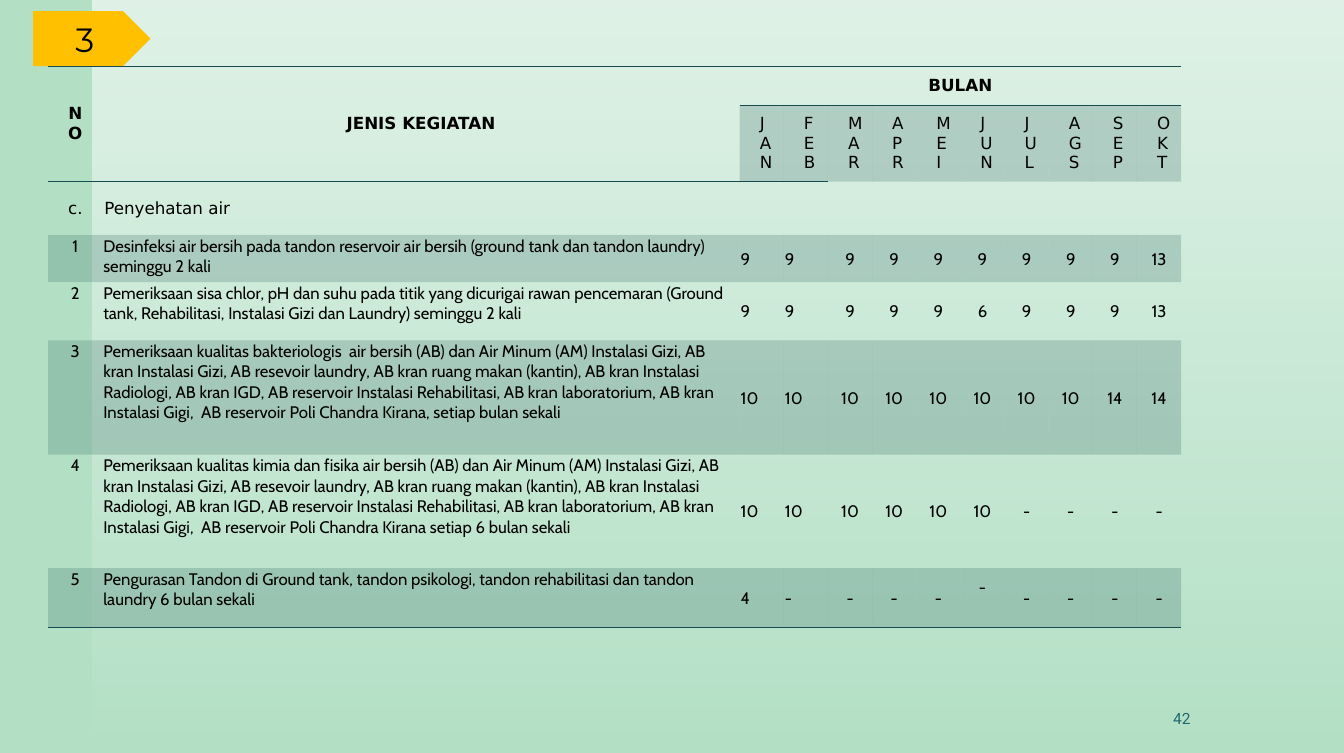
"""Build the water sanitation activity slide."""
import pptx
import pptx.dml.color
import pptx.enum.shapes
import pptx.enum.text
import pptx.oxml
import pptx.oxml.ns
import pptx.util

Inches, Pt, qn = pptx.util.Inches, pptx.util.Pt, pptx.oxml.ns.qn
ALIGN, ANCHOR = pptx.enum.text.PP_ALIGN, pptx.enum.text.MSO_ANCHOR
SHAPE = pptx.enum.shapes.MSO_SHAPE

DARK = "164B4F"
MONTHS = ["JAN", "FEB", "MAR", "APR", "MEI", "JUN", "JUL", "AGS", "SEP", "OKT"]
SECTION = "c.\tPenyehatan air"
TAPS = ("air bersih (AB) dan Air Minum (AM) Instalasi Gizi, AB kran Instalasi Gizi, "
        "AB resevoir laundry, AB kran ruang makan (kantin), AB kran Instalasi Radiologi, "
        "AB kran IGD, AB reservoir Instalasi Rehabilitasi, AB kran laboratorium, "
        "AB kran Instalasi Gigi,  AB reservoir Poli Chandra Kirana")
ACTIVITIES = [
    ("Desinfeksi air bersih pada tandon reservoir air bersih (ground tank dan tandon "
     "laundry) seminggu 2 kali", ["9"] * 9 + ["13"]),
    ("Pemeriksaan sisa chlor, pH dan suhu pada titik yang dicurigai rawan pencemaran "
     "(Ground tank, Rehabilitasi, Instalasi Gizi dan Laundry) seminggu 2 kali",
     ["9"] * 5 + ["6"] + ["9"] * 3 + ["13"]),
    ("Pemeriksaan kualitas bakteriologis  " + TAPS + ", setiap bulan sekali",
     ["10"] * 8 + ["14"] * 2),
    ("Pemeriksaan kualitas kimia dan fisika " + TAPS + " setiap 6 bulan sekali",
     ["10"] * 6 + ["-"] * 4),
    ("Pengurasan Tandon di Ground tank, tandon psikologi, tandon rehabilitasi dan tandon "
     "laundry 6 bulan sekali", ["4"] + ["-"] * 9),
]
COLS = [0.54, 6.35] + [0.44] * len(MONTHS)
ROWS = [0.39, 0.74, 0.53, 0.47, 0.58, 1.14, 1.13, 0.59]
HEAD_INSETS = (0.2, 0.08, 0.2, 0.08)
BODY_INSETS = (0.01, 0.01, 0.01, 0)


def rgb(color):
    return pptx.dml.color.RGBColor.from_string(color)


def set_alpha(clr, percent):
    alpha = clr.makeelement(qn("a:alpha"), {"val": str(percent * 1000)})
    clr.append(alpha)


def write(tf, text, font="DejaVu Sans", size=12, color="000000", bold=False,
          align=ALIGN.CENTER):
    tf.word_wrap = True
    p = tf.paragraphs[0]
    p.alignment = align
    r = p.add_run()
    r.text = text
    r.font.name, r.font.size, r.font.bold = font, Pt(size), bold
    r.font.color.rgb = rgb(color)
    return p


def fill_cell(cell, text, insets, anchor=ANCHOR.MIDDLE, **fmt):
    (cell.margin_left, cell.margin_top,
     cell.margin_right, cell.margin_bottom) = map(Inches, insets)
    cell.vertical_anchor = anchor
    return write(cell.text_frame, text, **fmt)


def shade(cell):
    cell.fill.solid()
    cell.fill.fore_color.rgb = rgb(DARK)
    for clr in cell._tc.iter(qn("a:solidFill")):
        if clr.getparent().tag == qn("a:tcPr"):
            set_alpha(clr[0], 20)


def rule(cell, side):
    ln = pptx.oxml.parse_xml(
        f'<a:ln{side} xmlns:a="http://schemas.openxmlformats.org/drawingml/2006/main" w="12700">'
        f'<a:solidFill><a:srgbClr val="{DARK}"/></a:solidFill></a:ln{side}>')
    cell._tc.get_or_add_tcPr().insert(0, ln)


def add_block(s, shape, box):
    sp = s.shapes.add_shape(shape, *map(Inches, box))
    sp.shadow.inherit = False
    sp.line.fill.background()
    return sp


def add_backdrop(s):
    s.background.fill.solid()
    s.background.fill.fore_color.rgb = rgb("B3E0C5")
    sp = add_block(s, SHAPE.RECTANGLE, (0.92, 0, 12.47, 7.5))
    sp.fill.gradient()
    sp.fill.gradient_angle = 270
    for stop, position, opacity in zip(sp.fill.gradient_stops, (0, 1), (60, 0)):
        stop.position = position
        stop.color.rgb = rgb("FFFFFF")
    for clr, opacity in zip(sp._element.spPr.iter(qn("a:srgbClr")), (60, 0)):
        set_alpha(clr, opacity)


def add_schedule(s):
    frame = s.shapes.add_table(len(ROWS), len(COLS), Inches(0.48), Inches(0.66),
                               Inches(sum(COLS)), Inches(sum(ROWS)))
    t = frame.table
    t.first_row = t.horz_banding = False
    t._tbl.tblPr.find(qn("a:tableStyleId")).text = "{2D5ABB26-0587-4C30-8999-92F81FD0307C}"
    for col, width in zip(t.columns, COLS):
        col.width = Inches(width)
    for row, height in zip(t.rows, ROWS):
        row.height = Inches(height)
    for cell in t.iter_cells():
        cell.fill.background()

    last = len(COLS) - 1
    for first, end, label in (((0, 0), (1, 0), "NO"), ((0, 1), (1, 1), "JENIS KEGIATAN"),
                              ((0, 2), (0, last), "BULAN")):
        t.cell(*first).merge(t.cell(*end))
        fill_cell(t.cell(*first), label, HEAD_INSETS, bold=True)
    for c, month in enumerate(MONTHS, 2):
        fill_cell(t.cell(1, c), month, HEAD_INSETS)
        shade(t.cell(1, c))

    t.cell(2, 0).merge(t.cell(2, 3))
    p = fill_cell(t.cell(2, 0), SECTION, HEAD_INSETS, align=ALIGN.LEFT)
    pPr = p._p.get_or_add_pPr()
    pPr.set("marL", str(Inches(0.36)))
    pPr.set("indent", str(-Inches(0.36)))

    for number, (activity, days) in enumerate(ACTIVITIES, 1):
        r = number + 2
        fill_cell(t.cell(r, 0), str(number), BODY_INSETS, ANCHOR.TOP, font="Cabin")
        fill_cell(t.cell(r, 1), activity, BODY_INSETS, ANCHOR.TOP, font="Cabin",
                  align=ALIGN.LEFT)
        for c, day in enumerate(days, 2):
            fill_cell(t.cell(r, c), day, BODY_INSETS, font="Cabin",
                      align=ALIGN.LEFT if c < 4 else ALIGN.CENTER)
        if number % 2:
            for c in range(len(COLS)):
                shade(t.cell(r, c))
    t.cell(len(ROWS) - 1, 2 + MONTHS.index("JUN")).margin_bottom = Inches(0.22)

    for c in range(len(COLS)):
        rule(t.cell(0, c), "B")
        rule(t.cell(0, c), "T")
        rule(t.cell(len(ROWS) - 1, c), "B")
    for c in range(4):
        rule(t.cell(1, c), "B")


def main():
    prs = pptx.Presentation()
    prs.slide_width, prs.slide_height = Inches(13.39), Inches(7.5)
    s = prs.slides.add_slide(prs.slide_layouts[6])
    add_backdrop(s)

    page = s.shapes.add_textbox(Inches(8.84), Inches(6.95), Inches(3.12), Inches(0.4))
    page.text_frame.vertical_anchor = ANCHOR.MIDDLE
    write(page.text_frame, "42", font="Roboto", size=11.1, color="1F696F", align=ALIGN.RIGHT)

    badge = add_block(s, SHAPE.PENTAGON, (0.33, 0.11, 1.17, 0.55))
    badge.fill.solid()
    badge.fill.fore_color.rgb = rgb("FFC000")
    badge.text_frame.vertical_anchor = ANCHOR.MIDDLE
    write(badge.text_frame, "3", font="Montserrat", size=24.1)

    add_schedule(s)
    prs.save("out.pptx")


if __name__ == "__main__":
    main()
